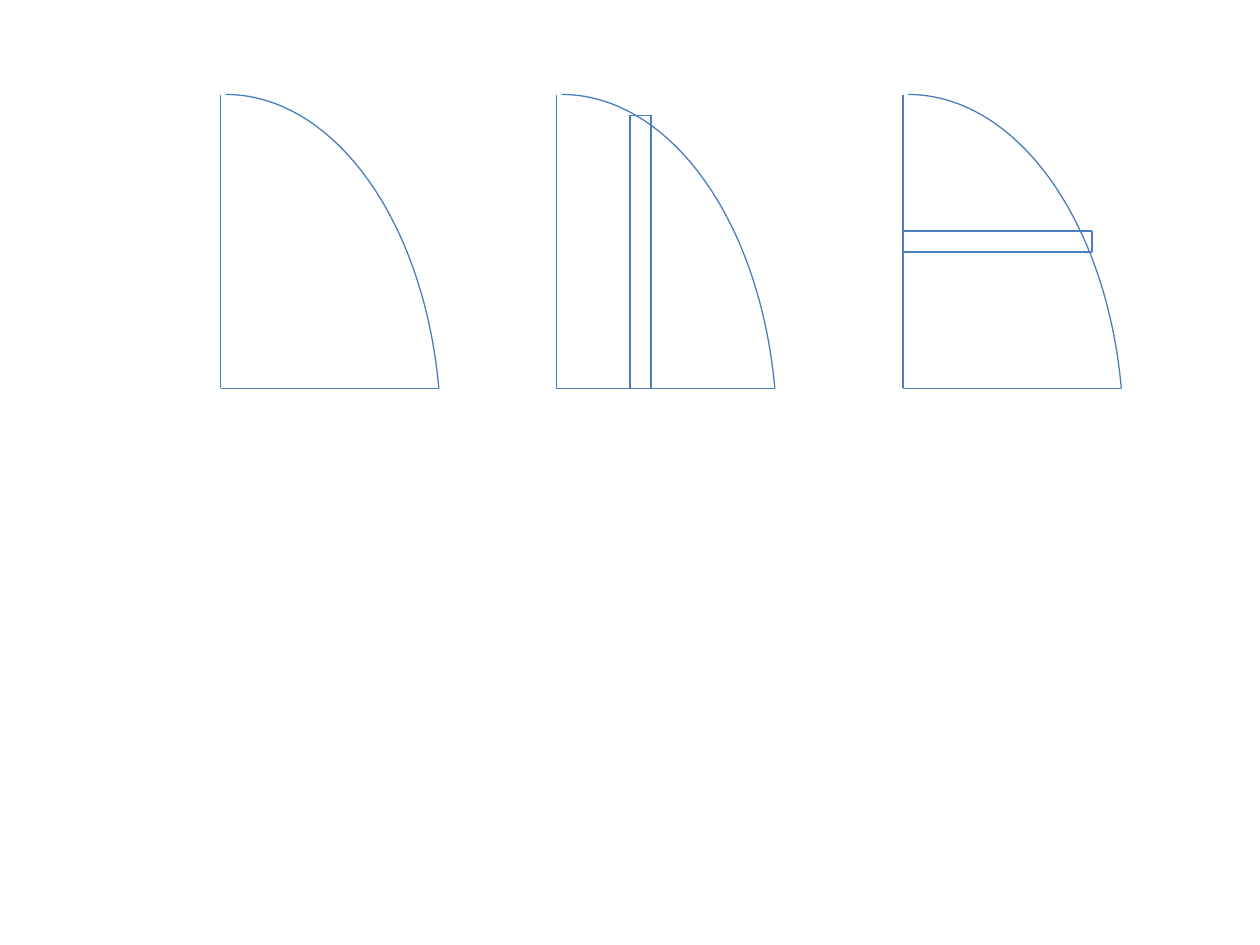
from pptx import Presentation, util as u
from pptx.dml.color import RGBColor
from pptx.enum import shapes
from pptx.oxml.ns import qn
from lxml import etree

COLS, ROWS = 120, 90
BLUE = "4B7EBC"
PANEL_TOP, PANEL_W, PANEL_H = 9, 20.8, 28
ARC_W, ARC_H, ARC_SHIFT = 41, 65, -20
ARC_ANGLES = (162, 208.543)

prs = Presentation()
prs.slide_width, prs.slide_height = u.Inches(10), u.Inches(7.5)
CELL_W, CELL_H = prs.slide_width / COLS, prs.slide_height / ROWS


def color(value):
    """Turn a hex string into a colour."""
    return RGBColor.from_string(value)


def grid(x, y):
    """Turn columns and rows into slide lengths."""
    return round(x * CELL_W), round(y * CELL_H)


def outline(s):
    """Give a shape or connector the thin blue line."""
    s.line.color.rgb = color(BLUE)
    for name, value in {"width": u.Pt(0.75)}.items():
        setattr(s.line, name, value)


def add_line(group, box, start, end):
    """Draw a straight line between two points relative to the box."""
    left, top = box[:2]
    points = grid(left + start[0], top + start[1]) + grid(left + end[0], top + end[1])
    s = group.shapes.add_connector(shapes.MSO_CONNECTOR.STRAIGHT, *points)
    etree.SubElement(s._element.spPr, qn("a:effectLst"))
    outline(s)


def add_region(group, box):
    """Draw the two axes and the curve that bound the region."""
    left, top, width, height = box
    add_line(group, box, (0, 0), (0, height))
    s = group.shapes.add_shape(shapes.MSO_SHAPE.ARC, *grid(left + ARC_SHIFT, top), *grid(ARC_W, ARC_H))
    for i, angle in enumerate(ARC_ANGLES):
        s.adjustments[i] = angle
    s.shadow.inherit = False
    s.fill.background()
    outline(s)
    add_line(group, box, (0, height), (width, height))


def add_panel(slide, box, strip):
    """Group a region with the open strip traced by its corner points."""
    group = slide.shapes.add_group_shape()
    add_region(group, box)
    for start, end in zip(strip, strip[1:]):
        add_line(group, box, start, end)


def main():
    """Build the three panels and save the slide."""
    slide = prs.slides.add_slide(prs.slide_layouts[6])
    vertical = [(7, PANEL_H), (7, 2), (9, 2), (9, PANEL_H)]
    horizontal = [(0, 13), (18, 13), (18, 15), (0, 15)]
    for left, strip in ((21, []), (53, vertical), (86, horizontal)):
        add_panel(slide, (left, PANEL_TOP, PANEL_W, PANEL_H), strip)
    prs.save("out.pptx")


if __name__ == "__main__":
    main()
